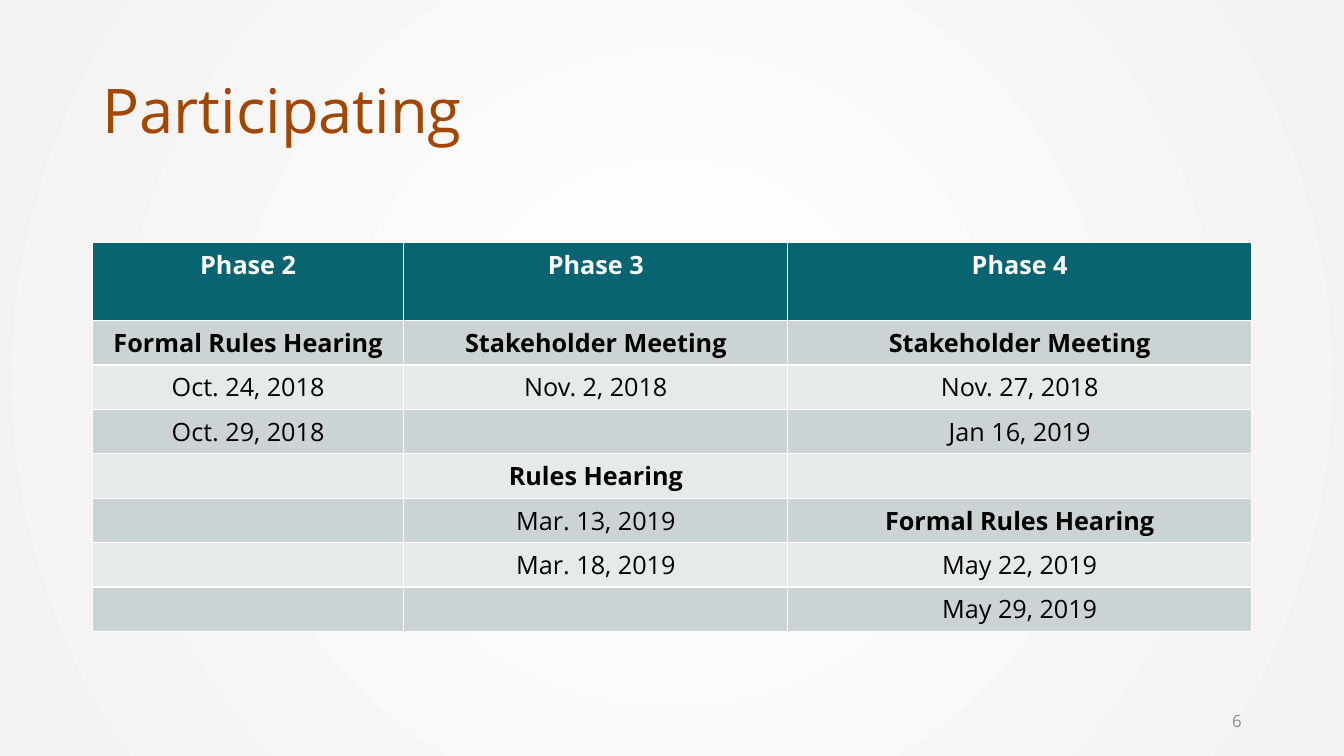
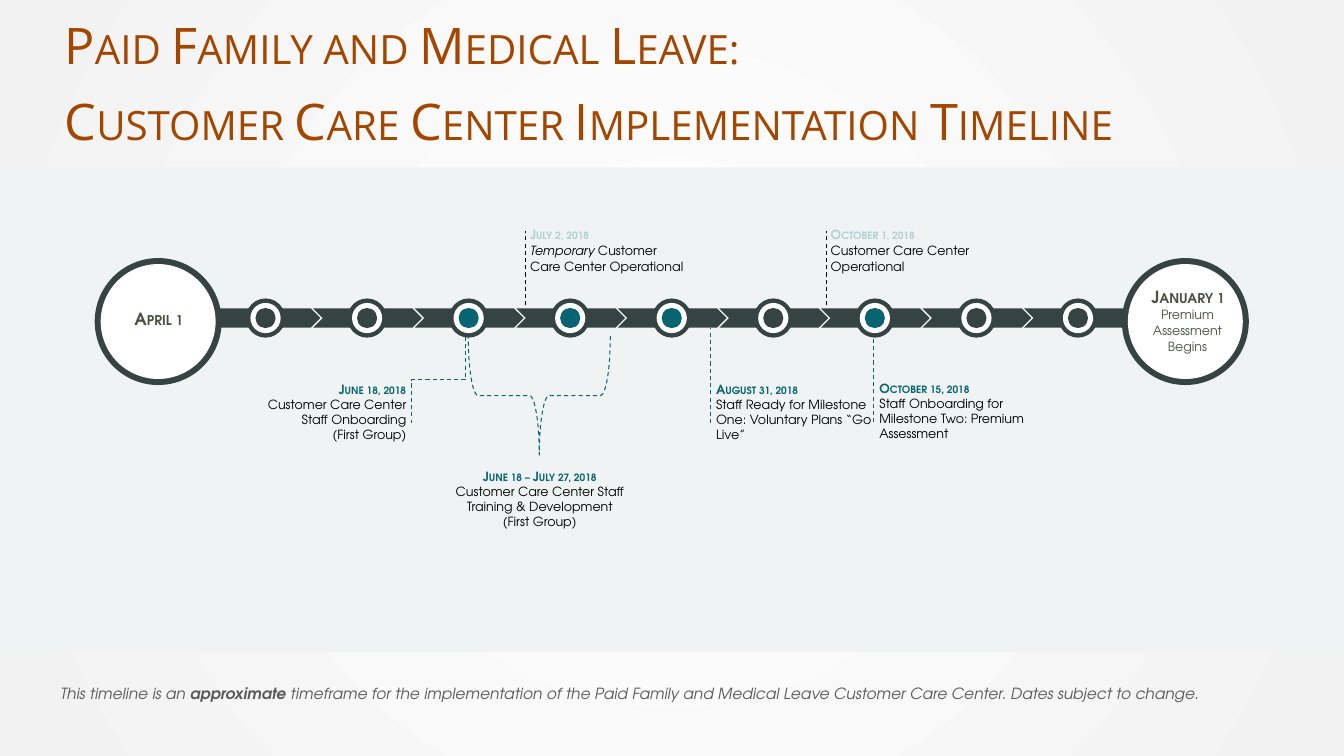
from dataclasses import dataclass

from lxml.etree import SubElement
from pptx import Presentation
from pptx.dml.color import RGBColor
from pptx.enum.dml import MSO_LINE
from pptx.enum.shapes import MSO_CONNECTOR, MSO_SHAPE
from pptx.enum.text import MSO_ANCHOR, MSO_AUTO_SIZE, PP_ALIGN
from pptx.oxml.ns import qn
from pptx.util import Pt

# Shared style
HEADING_FONT, BODY_FONT = "Open Sans", "TeX Gyre Adventor"
RUST, TEAL, PALE_TEAL, SLATE = "A24600", "086470", "B0D0D5", "364343"
OLIVE, WHITE, BLACK, GRAY, NOTE_GRAY = "4A5242", "FFFFFF", "000000", "8C8C8C", "595959"
BAND, ROW_DARK, ROW_LIGHT, EDGE = "F0F3F3", "CCD3D5", "E7EAEB", "F2F2F2"
LEFT, CENTER, RIGHT = PP_ALIGN.LEFT, PP_ALIGN.CENTER, PP_ALIGN.RIGHT
LOOSE = 1.07


@dataclass
class Span:
    text: str
    bold: bool = False
    italic: bool = False


@dataclass
class Event:
    date: str
    lines: list
    left: float
    top: float
    width: float = 126
    color: str = TEAL
    align: PP_ALIGN = LEFT
    spacing: float = 1.0


@dataclass
class Guide:
    x: float
    top: float
    bottom: float
    color: str


# Content
SCHEDULE = [
    ["Phase 2", "Phase 3", "Phase 4"],
    ["Formal Rules Hearing", "Stakeholder Meeting", "Stakeholder Meeting"],
    ["Oct. 24, 2018", "Nov. 2, 2018", "Nov. 27, 2018"],
    ["Oct. 29, 2018", "", "Jan 16, 2019"],
    ["", "Rules Hearing", ""],
    ["", "Mar. 13, 2019", "Formal Rules Hearing"],
    ["", "Mar. 18, 2019", "May 22, 2019"],
    ["", "", "May 29, 2019"],
]
COLUMN_WIDTHS = [222.5, 274.3, 331.2]
HEADER_HEIGHT, ROW_HEIGHT = 56, 31.7

EVENTS = [
    Event("July 2, 2018",
          [[Span("Temporary", italic=True), Span(" Customer Care Center Operational")]],
          371.5, 157.7, color=PALE_TEAL, spacing=LOOSE),
    Event("October 1, 2018", ["Customer Care Center Operational"],
          586.3, 157.7, color=PALE_TEAL, spacing=LOOSE),
    Event("June 18, 2018", ["Customer Care Center Staff Onboarding", "(First Group)"],
          171.2, 268.4, align=RIGHT),
    Event("June 18 – July 27, 2018",
          ["Customer Care Center Staff Training & Development", "(First Group)"],
          316, 330.5, width=139, align=CENTER),
    Event("August 31, 2018", ["Staff Ready for Milestone One: Voluntary Plans “Go Live”"],
          504.4, 268.4, width=126.5),
    Event("October 15, 2018", ["Staff Onboarding for Milestone Two: Premium Assessment"],
          621, 267.8),
]
GUIDES = [
    Guide(375.1, 164.9, 218.2, BLACK),
    Guide(590.4, 164.9, 218.2, BLACK),
    Guide(507.6, 234, 302.4, TEAL),
    Guide(624.2, 234, 301.7, TEAL),
]

# Timeline geometry
FIRST_NODE, PITCH, NODE_COUNT, AXIS = 189.7, 72.54, 9, 227.2
ACTIVE_NODES = {2, 3, 4, 6}
START_X, FINISH_X, END_Y = 113, 846.7, 229.7


def rgb(value: str) -> RGBColor:
    return RGBColor.from_string(value)


def write(frame, lines, *, size: float, color: str, font: str = BODY_FONT,
          bold: bool = False, italic: bool = False, small_caps: bool = False,
          align: PP_ALIGN = LEFT, spacing: float = 1.0, after: float = 0,
          anchor=MSO_ANCHOR.TOP) -> None:
    """Fill a text frame; each line is a string or a list of spans."""
    frame.word_wrap = True
    frame.auto_size = MSO_AUTO_SIZE.NONE
    frame.vertical_anchor = anchor
    for index, line in enumerate(lines):
        para = frame.add_paragraph() if index else frame.paragraphs[0]
        para.alignment = align
        para.line_spacing = spacing
        para.space_before, para.space_after = Pt(0), Pt(after)
        for span in [Span(line)] if isinstance(line, str) else line:
            run = para.add_run()
            run.text = span.text
            run.font.name, run.font.size = font, Pt(size)
            run.font.bold = bold or span.bold
            run.font.italic = italic or span.italic
            run.font.color.rgb = rgb(color)
            if small_caps:
                run.font._element.set("cap", "small")


def place(box, left: float, top: float, width: float, height: float) -> None:
    box.left, box.top, box.width, box.height = Pt(left), Pt(top), Pt(width), Pt(height)


def add_text(page, lines, left: float, top: float, width: float, height: float, **style) -> None:
    box = page.shapes.add_textbox(Pt(left), Pt(top), Pt(width), Pt(height))
    write(box.text_frame, lines, **style)


def add_shape(page, kind, left: float, top: float, width: float, height: float, color: str):
    shape = page.shapes.add_shape(kind, Pt(left), Pt(top), Pt(width), Pt(height))
    shape.shadow.inherit = False
    shape.fill.solid()
    shape.fill.fore_color.rgb = rgb(color)
    shape.line.fill.background()
    return shape


def add_disc(page, x: float, y: float, size: float, color: str) -> None:
    add_shape(page, MSO_SHAPE.OVAL, x - size / 2, y - size / 2, size, size, color)


def dash(line, color: str) -> None:
    line.color.rgb = rgb(color)
    line.width = Pt(0.75)
    line.dash_style = MSO_LINE.DASH


def add_line(page, x1: float, y1: float, x2: float, y2: float, color: str,
             kind=MSO_CONNECTOR.STRAIGHT):
    line = page.shapes.add_connector(kind, Pt(x1), Pt(y1), Pt(x2), Pt(y2))
    dash(line.line, color)
    SubElement(line.element.spPr, qn("a:effectLst"))
    return line


def add_drop_elbow(page, x1: float, y1: float, x2: float, y2: float, color: str) -> None:
    """Elbow that leaves downward, crosses to the left and ends downward."""
    middle_x, middle_y = (x1 + x2) / 2, (y1 + y2) / 2
    half_width, half_height = (y2 - y1) / 2, (x1 - x2) / 2
    elbow = add_line(page, middle_x - half_width, middle_y - half_height,
                     middle_x + half_width, middle_y + half_height, color, MSO_CONNECTOR.ELBOW)
    elbow.element.spPr.find(qn("a:xfrm")).set("rot", "5400000")


def set_background(deck) -> None:
    fill = deck.slide_master.background.fill
    fill.gradient()
    for stop, color in zip(fill.gradient_stops, (WHITE, EDGE)):
        stop.color.rgb = rgb(color)
    gradient = deck.slide_master.element.find(f".//{qn('p:bg')}//{qn('a:gradFill')}")
    gradient.remove(gradient.find(qn("a:lin")))
    circle = SubElement(gradient, qn("a:path"), {"path": "circle"})
    SubElement(circle, qn("a:fillToRect"), dict.fromkeys("ltrb", "50000"))


def add_page(deck, title_lines, bounds, **style):
    page = deck.slides.add_slide(deck.slide_layouts[5])
    place(page.shapes.title, *bounds)
    write(page.shapes.title.text_frame, title_lines, font=HEADING_FONT, color=RUST, **style)
    return page


def build_schedule(deck) -> None:
    page = add_page(deck, ["Participating"], (66, 28.8, 828, 104.4),
                    size=44, spacing=0.9, anchor=MSO_ANCHOR.MIDDLE)
    add_text(page, ["6"], 678, 500.4, 216, 28.8, size=12, font=HEADING_FONT,
             color=GRAY, align=RIGHT, anchor=MSO_ANCHOR.MIDDLE)
    heights = [HEADER_HEIGHT] + [ROW_HEIGHT] * (len(SCHEDULE) - 1)
    table = page.shapes.add_table(len(SCHEDULE), len(COLUMN_WIDTHS), Pt(66), Pt(173),
                                  Pt(sum(COLUMN_WIDTHS)), Pt(sum(heights))).table
    for column, width in zip(table.columns, COLUMN_WIDTHS):
        column.width = Pt(width)
    for index, (row, height, texts) in enumerate(zip(table.rows, heights, SCHEDULE)):
        row.height = Pt(height)
        band = ROW_DARK if index % 2 else ROW_LIGHT
        for cell, text in zip(row.cells, texts):
            cell.fill.solid()
            cell.fill.fore_color.rgb = rgb(band if index else TEAL)
            if text:
                write(cell.text_frame, [text], size=18, font=HEADING_FONT, align=CENTER,
                      color=BLACK if index else WHITE,
                      bold=index == 0 or text.endswith(("Hearing", "Meeting")))


def add_track(page) -> None:
    # Chevron pairs with a ringed node on each
    for index in range(NODE_COUNT):
        x = FIRST_NODE + index * PITCH
        for offset, width in ((-5.4, 44.6), (-38.5, 38.2)):
            add_shape(page, MSO_SHAPE.CHEVRON, x + offset, AXIS - 6.85, width, 13.7, SLATE)
        core = TEAL if index in ACTIVE_NODES else SLATE
        for size, color in ((28, SLATE), (21.6, WHITE), (14.4, core)):
            add_disc(page, x, AXIS, size, color)
    # Large end circles
    for x in (START_X, FINISH_X):
        add_disc(page, x, END_Y, 90.7, SLATE)
        add_disc(page, x, END_Y, 82.1, WHITE)
    for text, left, top in (("April 1", 75.6, 216), ("January 1", 810.7, 200.2)):
        add_text(page, [text], left, top, 75.6, 23.8, size=12, color=OLIVE, bold=True,
                 small_caps=True, align=CENTER, spacing=LOOSE)
    add_text(page, ["Premium Assessment Begins"], 805.7, 214.6, 85, 64.8,
             size=9, color=OLIVE, align=CENTER, spacing=LOOSE)


def build_timeline(deck) -> None:
    page = add_page(deck, ["Paid Family and Medical Leave:",
                           "Customer Care Center Implementation Timeline"],
                    (38.9, 3.6, 861, 108.7), size=36, small_caps=True, spacing=LOOSE, after=8)
    add_shape(page, MSO_SHAPE.RECTANGLE, 0, 119.5, 960, 346.3, BAND)
    add_text(page, [[Span("This timeline is an "), Span("approximate", bold=True),
                     Span(" timeframe for the implementation of the Paid Family and Medical Leave "
                          "Customer Care Center. Dates subject to change.")]],
             36, 485.3, 912, 21, size=11, color=NOTE_GRAY, italic=True)
    # Dashed guides sit behind the track
    for guide in GUIDES:
        add_line(page, guide.x, guide.bottom, guide.x, guide.top, guide.color)
    add_track(page)
    add_drop_elbow(page, 332.6, 240.5, 293.8, 302.4, TEAL)
    brace = add_shape(page, MSO_SHAPE.RIGHT_BRACE, 342.7, 231.8, 85, 101.5, TEAL)
    brace.fill.background()
    dash(brace.line, TEAL)
    brace.rotation = 90
    # Dates with their descriptions
    for event in EVENTS:
        add_text(page, [event.date], event.left, event.top, event.width, 23.8, size=9,
                 color=event.color, bold=True, small_caps=True, align=event.align, spacing=LOOSE)
        add_text(page, event.lines, event.left, event.top + 11.3, event.width, 40.3, size=9,
                 color=BLACK, align=event.align, spacing=event.spacing)


def main() -> None:
    deck = Presentation()
    deck.slide_width, deck.slide_height = Pt(960), Pt(540)
    set_background(deck)
    build_schedule(deck)
    build_timeline(deck)
    deck.save("out.pptx")


if __name__ == "__main__":
    main()
